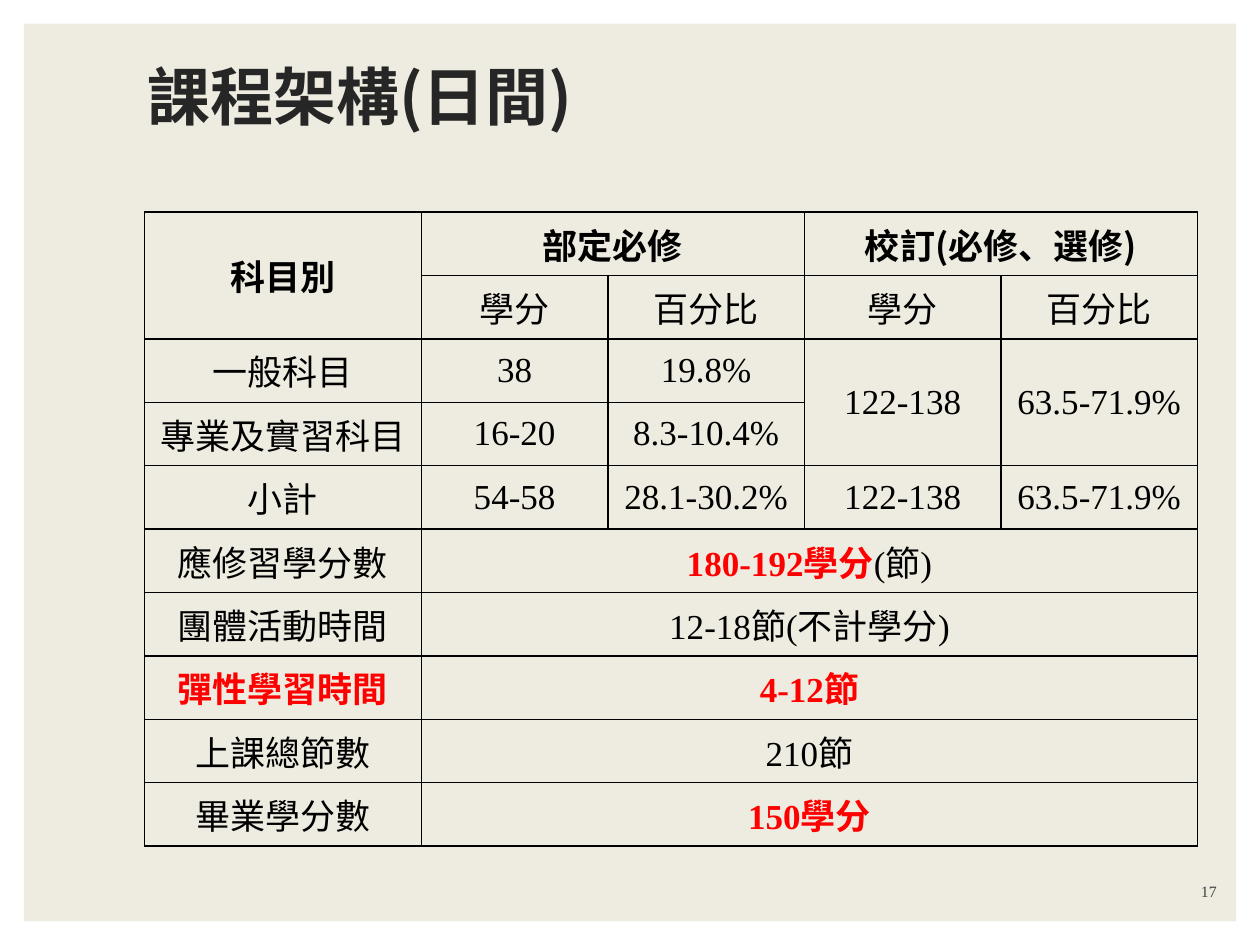
from dataclasses import dataclass
from lxml.etree import SubElement
from pptx import Presentation
from pptx.dml.color import RGBColor
from pptx.enum.shapes import MSO_SHAPE
from pptx.enum.text import MSO_ANCHOR, PP_ALIGN
from pptx.oxml import parse_xml
from pptx.oxml.ns import nsdecls, qn
from pptx.util import Inches, Pt


@dataclass(frozen=True)
class Theme:
    panel: str = "EEECE1"
    title: str = "262626"
    ink: str = "000000"
    accent: str = "FF0000"
    note: str = "404040"
    sans: str = "Noto Sans CJK SC"
    serif: str = "Times New Roman"
    head: int = 36
    body: int = 20
    small: int = 9


T = Theme()
WIDE, HIGH = Inches(10), Inches(7.5)

# Column widths in inches; ten equal rows fill the table box
COLS = (2.2, 1.48, 1.56, 1.56, 1.56)
ROWS = 10
LABEL = dict(font=T.sans)
HEAD = dict(font=T.sans, bold=True)
VALUE = dict(font=T.serif)
KEY = dict(font=T.serif, bold=True, color=T.accent)

# Each cell: row, column, rows spanned, columns spanned, runs
HEADS = [
    (0, 0, 2, 1, [("科目別", HEAD)]),
    (0, 1, 1, 2, [("部定必修", HEAD)]),
    (0, 3, 1, 2, [("校訂(必修、選修)", HEAD)]),
] + [(1, col, 1, 1, [(text, LABEL)])
     for col, text in enumerate(("學分", "百分比") * 2, 1)]
NAMES = ("一般科目", "專業及實習科目", "小計", "應修習學分數", "團體活動時間",
         "彈性學習時間", "上課總節數", "畢業學分數")
FLEX = "彈性學習時間"
LABELS = [
    (row, 0, 1, 1, [(name, dict(HEAD, color=T.accent) if name == FLEX else LABEL)])
    for row, name in enumerate(NAMES, 2)
]
SHARES = [
    (row, col, tall, 1, [(text, VALUE)])
    for row, col, tall, text in (
        (2, 1, 1, "38"), (2, 2, 1, "19.8%"),
        (2, 3, 2, "122-138"), (2, 4, 2, "63.5-71.9%"),
        (3, 1, 1, "16-20"), (3, 2, 1, "8.3-10.4%"),
        (4, 1, 1, "54-58"), (4, 2, 1, "28.1-30.2%"),
        (4, 3, 1, "122-138"), (4, 4, 1, "63.5-71.9%"),
    )
]
TOTALS = [
    (row, 1, 1, 4, runs)
    for row, runs in enumerate((
        [("180-192學分", KEY), ("(節)", VALUE)],
        [("12-18節(不計學分)", VALUE)],
        [("4-12節", KEY)],
        [("210節", VALUE)],
        [("150學分", KEY)],
    ), 5)
]


def share(x, y, w, h):
    """Turn percentages of the slide into a box."""
    return tuple(int(part * full / 100) for part, full
                 in zip((x, y, w, h), (WIDE, HIGH) * 2))


def write(para, text, font=T.sans, size=T.body, color=T.ink, bold=False,
          align=PP_ALIGN.CENTER):
    """Add one formatted run to a paragraph."""
    para.alignment = align
    run = para.add_run()
    run.text = text
    face = run.font
    face.name, face.size, face.bold = font, Pt(size), bold
    face.color.rgb = RGBColor.from_string(color)
    # East Asian glyphs always use the sans face
    SubElement(run.font._element, qn("a:ea")).set("typeface", T.sans)


def label(slide, box, text, anchor, **style):
    """Place a line of text in a box."""
    frame = slide.shapes.add_textbox(*box).text_frame
    frame.word_wrap = True
    frame.vertical_anchor = anchor
    para = frame.paragraphs[0]
    write(para, text, **style)
    return para


def panel(slide, box):
    """Fill the page with a tinted sheet."""
    sheet = slide.shapes.add_shape(MSO_SHAPE.RECTANGLE, *box)
    sheet.shadow.inherit = False
    sheet.fill.solid()
    sheet.fill.fore_color.rgb = RGBColor.from_string(T.panel)
    sheet.line.fill.background()


def border(cell):
    """Draw a thin line on all four sides of a cell."""
    props = cell._tc.get_or_add_tcPr()
    for spot, side in enumerate("LRTB"):
        props.insert(spot, parse_xml(
            f'<a:ln{side} {nsdecls("a")} w="{Pt(1)}"><a:solidFill>'
            f'<a:srgbClr val="{T.ink}"/></a:solidFill></a:ln{side}>'))


def credits(slide, box):
    """Build the credit table in a box."""
    left, top, wide, high = box
    grid = slide.shapes.add_table(ROWS, len(COLS), *box).table
    grid.first_row = grid.horz_banding = False
    for col, part in zip(grid.columns, COLS):
        col.width = int(wide * part / sum(COLS))
    for row in grid.rows:
        row.height = high // ROWS
    for cell in grid.iter_cells():
        cell.fill.background()
        border(cell)
    for row, col, tall, span, runs in HEADS + LABELS + SHARES + TOTALS:
        cell = grid.cell(row, col)
        if tall * span > 1:
            cell.merge(grid.cell(row + tall - 1, col + span - 1))
        cell.vertical_anchor = MSO_ANCHOR.MIDDLE
        for text, style in runs:
            write(cell.text_frame.paragraphs[0], text, **style)


def main():
    deck = Presentation()
    deck.slide_width, deck.slide_height = WIDE, HIGH
    slide = deck.slides.add_slide(deck.slide_layouts[6])
    # Background sheet
    panel(slide, share(1.9, 2.5, 96.2, 95))
    # Title
    title = label(slide, share(10.7, 6.1, 46, 9), "課程架構(日間)",
                  MSO_ANCHOR.MIDDLE, size=T.head, color=T.title, bold=True,
                  align=PP_ALIGN.LEFT)
    title.line_spacing = 0.9
    # Table
    credits(slide, share(11.45, 22.45, 83.6, 67.1))
    # Page number
    label(slide, share(85.55, 92, 12, 4), "17", MSO_ANCHOR.BOTTOM,
          font=T.serif, size=T.small, color=T.note, align=PP_ALIGN.RIGHT)
    deck.save("out.pptx")


if __name__ == "__main__":
    main()
